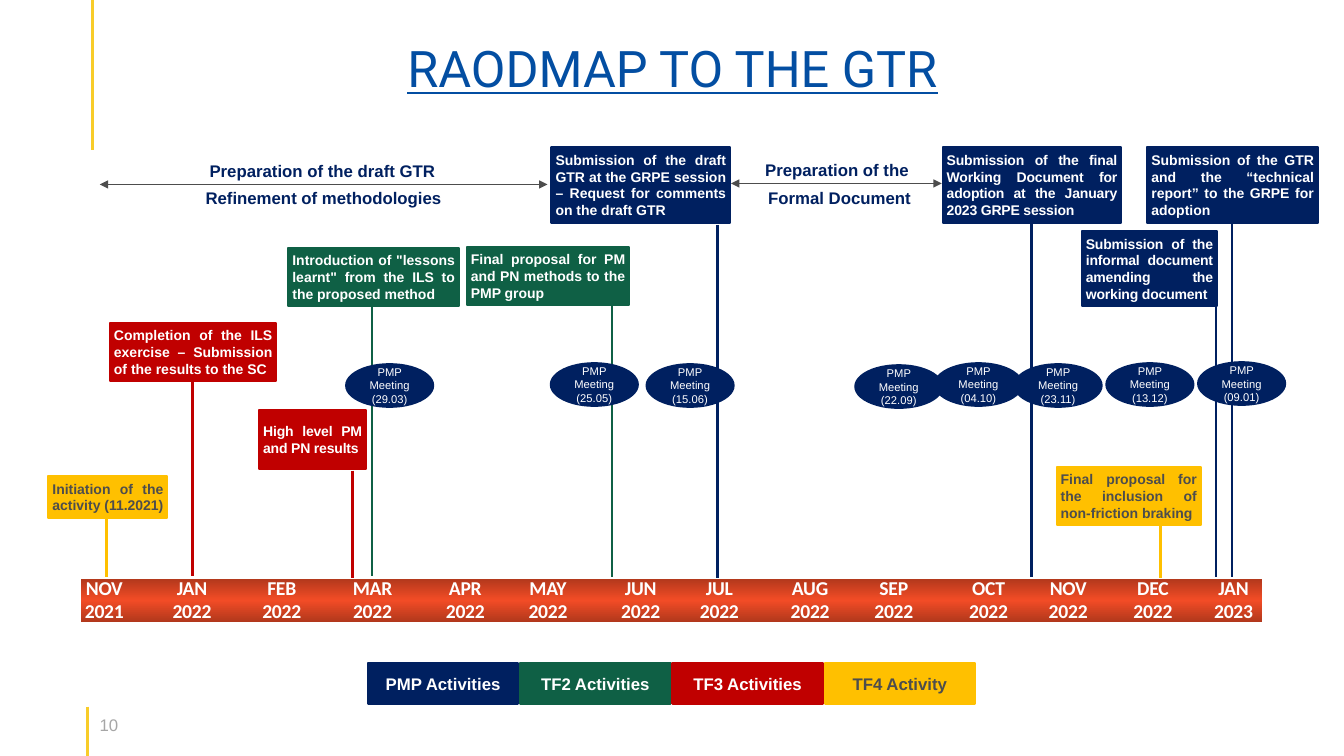
from copy import deepcopy

from lxml.etree import SubElement
from pptx import Presentation
from pptx.dml.color import RGBColor
from pptx.enum.shapes import MSO_CONNECTOR as CONNECTOR, MSO_SHAPE as SHAPE
from pptx.enum.text import MSO_ANCHOR as ANCHOR, MSO_AUTO_SIZE as AUTO_SIZE, PP_ALIGN as ALIGN
from pptx.oxml.ns import qn
from pptx.util import Pt

PX = 9144
NAVY, GREEN, RED, AMBER = "002060", "0F6045", "C00000", "FFC000"
WHITE, GREY, ACCENT = "FFFFFF", "4D4D4D", "F8CC29"

MONTHS = [
    ("NOV", 2021, 84), ("JAN", 2022, 171), ("FEB", 2022, 260), ("MAR", 2022, 350),
    ("APR", 2022, 442), ("MAY", 2022, 524), ("JUN", 2022, 616), ("JUL", 2022, 694),
    ("AUG", 2022, 784), ("SEP", 2022, 867), ("OCT", 2022, 961), ("NOV", 2022, 1040),
    ("DEC", 2022, 1124), ("JAN", 2023, 1204),
]
STEMS = [
    (RED, 191, 379, 571), (RED, 350, 467, 573), (GREEN, 369, 304, 571),
    (GREEN, 607, 300, 572), (NAVY, 712, 223, 573), (NAVY, 1023, 222, 572),
    (NAVY, 1206, 304, 572), (NAVY, 1222, 222, 572), (AMBER, 106, 513, 572),
    (AMBER, 1151, 522, 573),
]
MILESTONES = [
    (RED, (109, 320, 165, 58), 0,
     "Completion of the ILS exercise – Submission of the results to the SC"),
    (RED, (257, 407, 106, 58), -10, "High level PM and PN results"),
    (AMBER, (1048, 463, 143, 58), 0,
     "Final proposal for the inclusion of non-friction braking"),
    (AMBER, (48, 472, 118, 42), 0, "Initiation of the activity (11.2021)"),
    (GREEN, (286, 246, 169, 58), 0,
     'Introduction of "lessons learnt" from the ILS to the proposed method'),
    (GREEN, (463, 245, 161, 58), 0,
     "Final proposal for PM and PN methods to the PMP group"),
    (NAVY, (547, 146, 177, 75), 0,
     "Submission of the draft GTR at the GRPE session – Request for comments on the draft GTR"),
    (NAVY, (935, 146, 177, 75), -10,
     "Submission of the final Working Document for adoption at the January 2023 GRPE session"),
    (NAVY, (1138, 146, 169, 75), 0,
     "Submission of the GTR and the “technical report” to the GRPE for adoption"),
    (NAVY, (1073, 229, 134, 75), -10,
     "Submission of the informal document amending the working document"),
]
MEETINGS = [
    ("13.12", 1097, 360), ("09.01", 1188, 359), ("23.11", 1006, 361), ("25.05", 546, 360),
    ("04.10", 927, 360), ("22.09", 848, 362), ("15.06", 641, 361), ("29.03", 343, 361),
]
PHASES = [
    ("Preparation of the draft GTR", (198, 155, 247, 30)),
    ("Refinement of methodologies", (194, 181, 257, 30)),
    ("Preparation of the", (749, 154, 163, 30)),
    ("Formal Document", (752, 181, 163, 30)),
]
LEGEND = [("PMP Activities", NAVY), ("TF2 Activities", GREEN),
          ("TF3 Activities", RED), ("TF4 Activity", AMBER)]


def rgb(colour):
    return RGBColor.from_string(colour)


def emu(*lengths):
    return [length * PX for length in lengths]


def write(frame, lines, size, colour, align=ALIGN.LEFT, font="Arial", bold=False, spacing=0):
    frame.text = "\n".join(lines)
    for paragraph in frame.paragraphs:
        paragraph.alignment = align
        paragraph.font.name = font
        paragraph.font.size = Pt(size)
        paragraph.font.bold = bold
        paragraph.font.color.rgb = rgb(colour)
        if spacing:
            for run in paragraph.runs:
                run.font._element.set("spc", str(spacing))


def set_margins(frame, margin):
    frame.margin_left = frame.margin_top = frame.margin_right = frame.margin_bottom = margin * PX


def add_block(slide, kind, box, colour, line_width=1.5):
    block = slide.shapes.add_shape(kind, *emu(*box))
    block.shadow.inherit = False
    block.fill.solid()
    block.fill.fore_color.rgb = rgb(colour)
    block.line.color.rgb = rgb(colour)
    block.line.width = Pt(line_width)
    block.text_frame.word_wrap = True
    block.text_frame.vertical_anchor = ANCHOR.MIDDLE
    return block.text_frame


def add_label(slide, box, lines, size, colour, margin=None, anchor=ANCHOR.TOP, **style):
    frame = slide.shapes.add_textbox(*emu(*box)).text_frame
    frame.word_wrap = False
    frame.vertical_anchor = anchor
    if margin is not None:
        set_margins(frame, margin)
    write(frame, lines, size, colour, **style)


def add_line(slide, ends, colour, width, arrows=False):
    line = slide.shapes.add_connector(CONNECTOR.STRAIGHT, *emu(*ends))
    line.line.color.rgb = rgb(colour)
    line.line.width = Pt(width)
    if arrows:
        for end in ("a:headEnd", "a:tailEnd"):
            SubElement(line.line._get_or_add_ln(), qn(end), type="triangle")
    SubElement(line._element.spPr, qn("a:effectLst"))


def add_title(slide, text):
    title = slide.shapes.title
    title.left, title.top, title.width, title.height = emu(106, 30, 1122, 68)
    frame = title.text_frame
    frame.auto_size = AUTO_SIZE.NONE
    frame.vertical_anchor = ANCHOR.BOTTOM
    frame.margin_bottom = 0
    write(frame, [text], 36, "034EA2", ALIGN.CENTER, "Roboto")
    frame.paragraphs[0].line_spacing = 0.9
    frame.paragraphs[0].font.underline = True


def add_month_bar(slide):
    bar = slide.shapes.add_shape(SHAPE.RECTANGLE, *emu(80, 574, 1172, 43))
    bar.shadow.inherit = False
    bar.line.fill.background()
    bar.fill.gradient()
    bar.fill.gradient_angle = 90
    stop_list = bar._element.spPr.find(qn("a:gradFill")).find(qn("a:gsLst"))
    stop_list.append(deepcopy(stop_list[0]))
    for stop, position, colour in zip(bar.fill.gradient_stops, (0, 0.5, 1),
                                      ("B2381C", "F24C26", "B2381C")):
        stop.position = position
        stop.color.rgb = rgb(colour)
    for month, year, left in MONTHS:
        add_label(slide, (left - 10, 575, 59, 39), [month, str(year)], 14, WHITE, margin=0,
                  anchor=ANCHOR.MIDDLE, align=ALIGN.CENTER, font="Calibri", bold=True,
                  spacing=-20)


def text_colour(fill):
    return GREY if fill == AMBER else WHITE


def add_milestone(slide, colour, box, spacing, text):
    frame = add_block(slide, SHAPE.RECTANGLE, box, colour)
    set_margins(frame, 4)
    write(frame, [text], 10, text_colour(colour), ALIGN.JUSTIFY, bold=True, spacing=spacing)


def add_meeting(slide, date, left, top):
    frame = add_block(slide, SHAPE.OVAL, (left, top, 87, 43), NAVY, 1)
    write(frame, ["PMP Meeting", f"({date})"], 8, WHITE, ALIGN.CENTER)


def add_legend(slide):
    for index, (activity, colour) in enumerate(LEGEND):
        box = (365 + 151 * index, 658, 149, 40)
        frame = add_block(slide, SHAPE.RECTANGLE, box, colour)
        write(frame, [activity], 12, text_colour(colour), ALIGN.CENTER, bold=True)


def main():
    deck = Presentation()
    deck.slide_width, deck.slide_height = emu(1333, 750)
    slide = deck.slides.add_slide(deck.slide_layouts[5])
    add_title(slide, "RAODMAP TO THE GTR")
    add_label(slide, (89, 699, 49, 40), ["10"], 12, "A6A6A6", anchor=ANCHOR.MIDDLE)
    add_line(slide, (87, 701, 87, 750), ACCENT, 2.25)
    add_line(slide, (92, 0, 92, 149), ACCENT, 2.25)
    add_month_bar(slide)
    for colour, x, top, bottom in STEMS:
        add_line(slide, (x, top, x, bottom), colour, 2)
    for milestone in MILESTONES:
        add_milestone(slide, *milestone)
    for text, box in PHASES:
        add_label(slide, box, [text], 12, NAVY, bold=True)
    add_line(slide, (99, 183, 543, 183), GREY, 0.5, arrows=True)
    add_line(slide, (725, 182, 934, 182), GREY, 0.5, arrows=True)
    add_legend(slide)
    for meeting in MEETINGS:
        add_meeting(slide, *meeting)
    deck.save("out.pptx")


if __name__ == "__main__":
    main()
